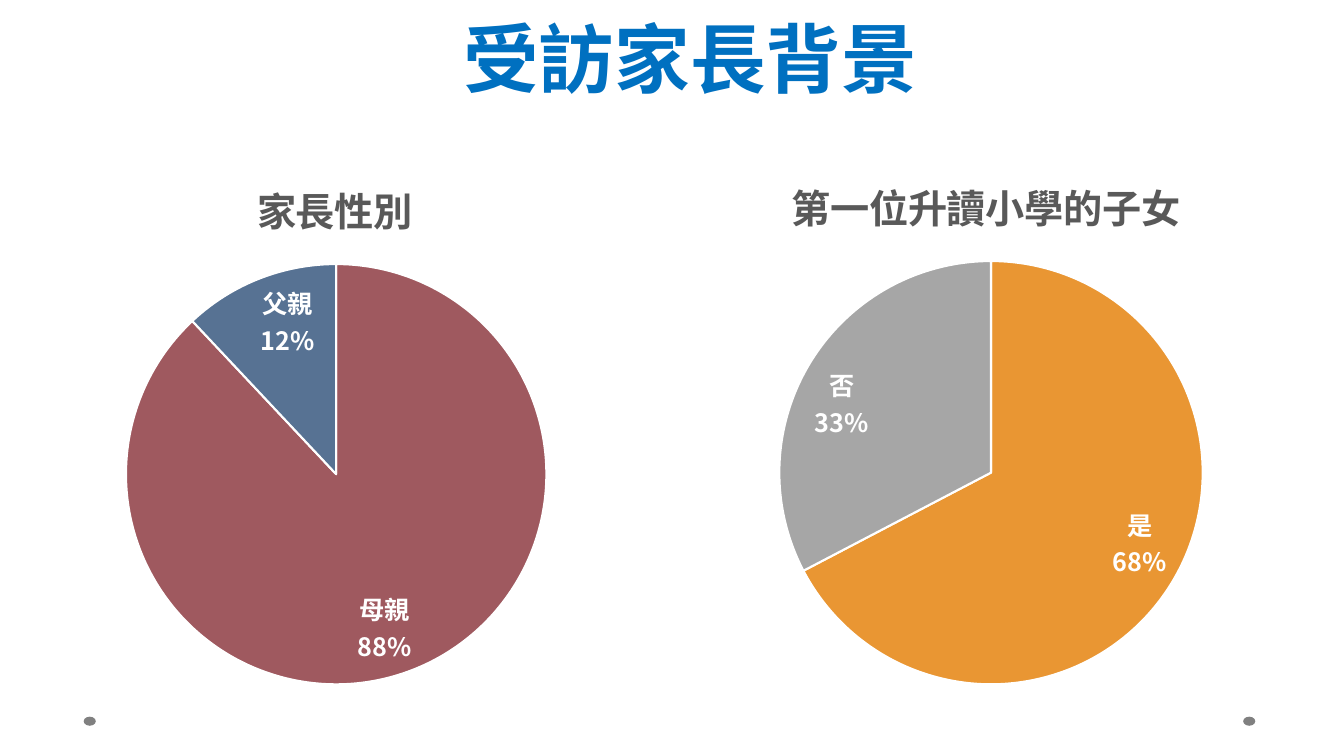
from pptx import Presentation
from pptx.chart.data import CategoryChartData
from pptx.dml.color import RGBColor
from pptx.enum.chart import XL_CHART_TYPE as CT, XL_LABEL_POSITION as POS
from pptx.enum.shapes import MSO_SHAPE as SHAPE
from pptx.enum.text import MSO_ANCHOR as ANCHOR, PP_ALIGN as ALIGN
from pptx.oxml import parse_xml
from pptx.oxml.ns import nsdecls, qn
from pptx.util import Inches, Pt

FONT = "TeX Gyre Pagella"
LABEL_FONT = "Noto Sans CJK TC"
WHITE = RGBColor(0xFF, 0xFF, 0xFF)
BLACK = RGBColor(0, 0, 0)
BLUE = RGBColor(0x00, 0x70, 0xC0)
DOT_GRAY = RGBColor(0x80, 0x80, 0x80)
TITLE_GRAY = RGBColor(0x59, 0x59, 0x59)
MAROON = RGBColor(0x9F, 0x59, 0x5F)
STEEL = RGBColor(0x57, 0x72, 0x93)
ORANGE = RGBColor(0xE9, 0x96, 0x33)
GRAY = RGBColor(0xA6, 0xA6, 0xA6)


def set_font(font, size, color, bold=False, name=FONT):
    values = {"name": name, "size": Pt(size), "bold": bold}
    for key, value in values.items():
        setattr(font, key, value)
    font.color.rgb = color


def add_dot(slide, x):
    sp = slide.shapes.add_shape(SHAPE.OVAL, Inches(x), Inches(7.11),
                                Inches(0.12), Inches(0.09))
    sp.shadow.inherit = False
    sp.fill.solid()
    sp.fill.fore_color.rgb = DOT_GRAY
    sp.line.fill.background()


def add_heading(slide, text):
    sp = slide.shapes.add_textbox(Inches(4.15), Inches(0.01),
                                  Inches(5.39), Inches(1.06))
    sp.fill.solid()
    sp.fill.fore_color.rgb = WHITE
    color = sp.fill._xPr.find(qn("a:solidFill"))[0]
    color.append(parse_xml(f'<a:alpha {nsdecls("a")} val="50000"/>'))
    tf = sp.text_frame
    tf.word_wrap = True
    tf.vertical_anchor = ANCHOR.BOTTOM
    p = tf.paragraphs[0]
    p.alignment = ALIGN.CENTER
    p.line_spacing = Pt(58)
    r = p.add_run()
    r.text = text
    set_font(r.font, 54, BLUE, True)


def place(part, index, target="", **fractions):
    """Give a chart part a manual layout in fractions of the chart's size."""
    old = part.find(qn("c:layout"))
    if old is not None:
        part.remove(old)
    modes = "".join(f'<c:{k}Mode val="edge"/>' for k in "xy")
    sizes = "".join(f'<c:{k} val="{v:.4f}"/>' for k, v in fractions.items())
    part.insert(index, parse_xml(
        f'<c:layout {nsdecls("c")}><c:manualLayout>{target}{modes}{sizes}'
        '</c:manualLayout></c:layout>'))


def add_pie(slide, box, title, title_at, pie_at, diameter, slices):
    """Add a pie chart; title_at and pie_at are slide positions in inches."""
    left, top, width, height = box
    data = CategoryChartData()
    data.categories = [name for name, _, _ in slices]
    data.add_series("Series 1", [value for _, value, _ in slices])
    chart = slide.shapes.add_chart(CT.PIE, *map(Inches, box), data).chart
    chart.has_legend = False
    set_font(chart.font, 10, BLACK)

    chart.has_title = True
    r = chart.chart_title.text_frame.paragraphs[0].add_run()
    r.text = title
    set_font(r.font, 28, TITLE_GRAY, True)
    place(chart.chart_title._element, 1,
          x=(title_at[0] - left) / width, y=(title_at[1] - top) / height)
    place(chart._chartSpace.chart.plotArea, 0,
          '<c:layoutTarget val="inner"/>',
          x=(pie_at[0] - left) / width, y=(pie_at[1] - top) / height,
          w=diameter / width, h=diameter / height)

    plot = chart.plots[0]
    plot.vary_by_categories = True
    for i, (_, _, color) in enumerate(slices):
        fmt = plot.series[0].points[i].format
        fmt.fill.solid()
        fmt.fill.fore_color.rgb = color
        fmt.line.color.rgb = WHITE
        fmt.line.width = Pt(1.5)

    labels = plot.series[0].data_labels
    values = {"show_category_name": True, "show_percentage": False,
              "show_value": True, "number_format": '0"%"',
              "number_format_is_linked": False, "position": POS.INSIDE_END}
    for name, value in values.items():
        setattr(labels, name, value)
    set_font(labels.font, 18, WHITE, True, LABEL_FONT)
    separator = parse_xml(f'<c:separator {nsdecls("c")}>\n</c:separator>')
    labels._element.find(qn("c:showBubbleSize")).addnext(separator)


def main():
    prs = Presentation()
    prs.slide_width, prs.slide_height = Inches(13.33), Inches(7.5)
    slide = prs.slides.add_slide(prs.slide_layouts[6])
    for x in (12.33, 0.83):
        add_dot(slide, x)
    add_heading(slide, "受訪家長背景")
    add_pie(slide, (-0.39, 1.52, 7.44, 5.4), "家長性別",
            (2.48, 1.68), (1.25, 2.62), 4.17,
            [("母親", 88, MAROON), ("父親", 12, STEEL)])
    add_pie(slide, (6.32, 1.49, 7.01, 5.43), "第一位升讀小學的子女",
            (7.78, 1.65), (7.73, 2.59), 4.2,
            [("是", 68, ORANGE), ("否", 33, GRAY)])
    prs.save("out.pptx")


if __name__ == "__main__":
    main()
